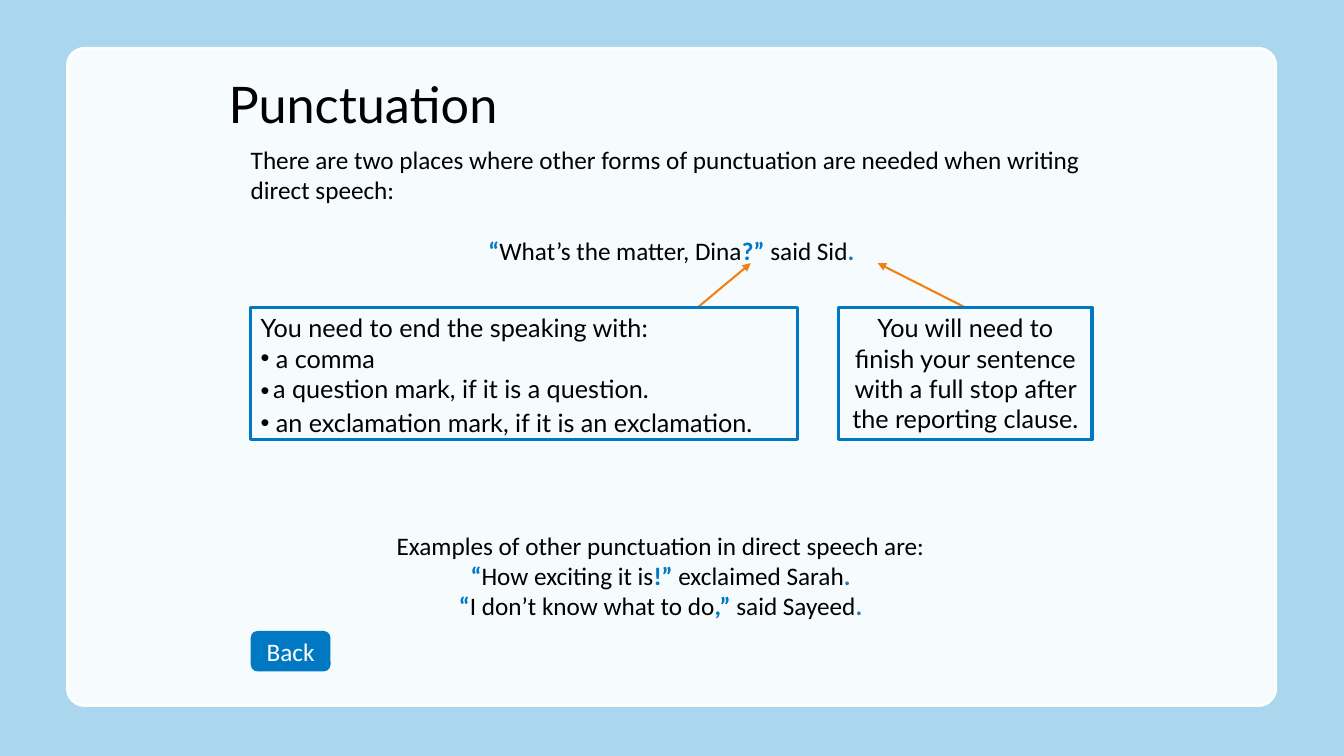
import pptx
import pptx.dml.color
import pptx.enum.dml
import pptx.enum.shapes
import pptx.enum.text
import pptx.oxml
import pptx.oxml.ns
import pptx.util
import lxml.etree

Cm = pptx.util.Cm
Pt = pptx.util.Pt
ALIGN = pptx.enum.text.PP_ALIGN
ANCHOR = pptx.enum.text.MSO_ANCHOR
SHAPE = pptx.enum.shapes.MSO_SHAPE

BLACK, WHITE, BLUE, STOP_BLUE = "000000", "FFFFFF", "0079C2", "2E75B6"
SKY, ORANGE = "AAD7EE", "F08214"
BODY, HEADING = "Calibri", "Lato"


def colour(hex_text):
    """Turn a hex string into an RGB colour."""
    return pptx.dml.color.RGBColor.from_string(hex_text)


def add_xml(parent, tag, **attributes):
    """Append a drawing element to a parent and return it."""
    return lxml.etree.SubElement(parent, pptx.oxml.ns.qn(tag), attributes)


def add_span(para, text, font=BODY, hex_text=BLACK, bold=False, size=18):
    """Add one formatted run to a paragraph."""
    span = para.add_run()
    span.text = text
    span.font.name = font
    span.font.size = Pt(size)
    span.font.bold = bold
    span.font.color.rgb = colour(hex_text)
    return span


def add_para(frame, align=ALIGN.LEFT):
    """Return the first unused paragraph of a frame, or a new one."""
    first = frame.paragraphs[0]
    para = frame.add_paragraph() if first.runs else first
    para.alignment = align
    return para


def set_frame(frame, anchor=ANCHOR.TOP, side=0.25, edge=0.13):
    """Set wrapping, anchor and margins in centimetres."""
    frame.word_wrap = True
    frame.auto_size = pptx.enum.text.MSO_AUTO_SIZE.NONE
    frame.vertical_anchor = anchor
    frame.margin_left = frame.margin_right = Cm(side)
    frame.margin_top = frame.margin_bottom = Cm(edge)
    return frame


def add_box(page, kind, box, fill=None, line=None, width=1):
    """Add a flat preset shape in a box given in centimetres."""
    shape = page.shapes.add_shape(kind, *map(Cm, box))
    shape.shadow.inherit = False
    if fill:
        shape.fill.solid()
        shape.fill.fore_color.rgb = colour(fill)
    else:
        shape.fill.background()
    if line:
        shape.line.color.rgb = colour(line)
        shape.line.width = Pt(width)
    else:
        shape.line.fill.background()
    return shape


def add_speech(frame, words, mark, clause):
    """Add a centred line of direct speech with its punctuation marked."""
    para = add_para(frame, ALIGN.CENTER)
    add_span(para, "“", hex_text=BLUE, bold=True)
    add_span(para, words)
    add_span(para, mark + "”", hex_text=BLUE, bold=True)
    add_span(para, clause)
    add_span(para, ".", hex_text=STOP_BLUE, bold=True)
    return para


def add_panel(page, box):
    """Lay the pale rounded panel behind everything else."""
    panel = add_box(page, SHAPE.ROUNDED_RECTANGLE, box, WHITE, WHITE, 2)
    panel.adjustments[0] = 0.026
    fill = panel.fill._xPr.find(pptx.oxml.ns.qn("a:solidFill"))
    add_xml(fill[0], "a:alpha", val="90000")
    page.shapes._spTree.insert(2, panel._element)


def add_title(page, box):
    """Place and format the title placeholder."""
    title = page.shapes.title
    title.left, title.top, title.width, title.height = map(Cm, box)
    para = add_para(set_frame(title.text_frame, ANCHOR.MIDDLE))
    para.line_spacing = 0.9
    add_span(para, "Punctuation", HEADING, size=36)


def add_intro(page, box):
    """Add the introduction and the sentence it explains."""
    frame = set_frame(page.shapes.add_textbox(*map(Cm, box)).text_frame, side=0, edge=0.2)
    add_span(add_para(frame), "There are two places where other forms of punctuation "
             "are needed when writing direct speech:")
    speech = add_speech(frame, "What’s the matter, Dina", "?", " said Sid")
    speech.space_before = Pt(22)


def add_arrow(page, start, end):
    """Draw an orange arrow between two points."""
    arrow = page.shapes.add_connector(
        pptx.enum.shapes.MSO_CONNECTOR.STRAIGHT, *map(Cm, start + end))
    arrow.line.color.rgb = colour(ORANGE)
    arrow.line.width = Pt(1.5)
    add_xml(arrow.line._get_or_add_ln(), "a:tailEnd", type="triangle")
    add_xml(arrow._element.spPr, "a:effectLst")


def add_speaking_rule(page, box):
    """Add the outlined list of marks that end the speaking."""
    frame = set_frame(add_box(page, SHAPE.RECTANGLE, box, line=BLUE, width=2.25).text_frame)
    add_span(add_para(frame), "You need to end the speaking with:", HEADING)
    for parts in ([" a comma"], [" ", "a question mark, if it is a question."],
                  [" an exclamation mark, if it is an exclamation."]):
        para = add_para(frame)
        props = para._p.get_or_add_pPr()
        add_xml(props, "a:buFont", typeface="Arial")
        add_xml(props, "a:buChar", char="•")
        spans = [add_span(para, part, HEADING) for part in parts]
        if len(spans) > 1:
            spans[0].font._element.set("baseline", "-25000")


def add_clause_rule(page, box):
    """Add the outlined note about the full stop."""
    frame = set_frame(add_box(page, SHAPE.RECTANGLE, box, line=BLUE, width=2.25).text_frame)
    add_span(add_para(frame, ALIGN.CENTER), "You will need to finish your sentence with "
             "a full stop after the reporting clause.", HEADING)


def add_examples(page, box):
    """Add the centred examples."""
    frame = set_frame(page.shapes.add_textbox(*map(Cm, box)).text_frame)
    add_span(add_para(frame, ALIGN.CENTER),
             "Examples of other punctuation in direct speech are:")
    add_speech(frame, "How exciting it is", "!", " exclaimed Sarah")
    add_speech(frame, "I don’t know what to do", ",", " said Sayeed")


def add_back_button(page, box):
    """Add the rounded Back button."""
    button = add_box(page, SHAPE.ROUNDED_RECTANGLE, box, BLUE)
    frame = set_frame(button.text_frame, ANCHOR.MIDDLE)
    add_span(add_para(frame, ALIGN.CENTER), "Back", hex_text=WHITE)


def main():
    """Build the slide and save the deck."""
    deck = pptx.Presentation()
    deck.slide_width, deck.slide_height = Cm(33.87), Cm(19.05)
    page = deck.slides.add_slide(deck.slide_layouts[5])
    page.background.fill.solid()
    page.background.fill.fore_color.rgb = colour(SKY)

    left, width, rules_top, rules_height = 6.32, 21.2, 7.75, 3.33
    clause_width = 6.38
    clause_left = left + width - clause_width
    add_panel(page, (1.7, 1.22, 30.45, 16.56))
    add_title(page, (5.51, 1.32, 22.83, 2.77))
    add_intro(page, (left, 3.43, width, 3.48))
    add_arrow(page, (17.58, rules_top), (18.92, 6.63))
    add_arrow(page, (24.33, rules_top), (22.12, 6.63))
    add_examples(page, (6.05, 13.23, width, 2.57))
    add_clause_rule(page, (clause_left, rules_top, clause_width, rules_height))
    add_speaking_rule(page, (left, rules_top, 13.79, rules_height))
    add_back_button(page, (left, 15.9, 2.01, 1.02))
    deck.save("out.pptx")


if __name__ == "__main__":
    main()
